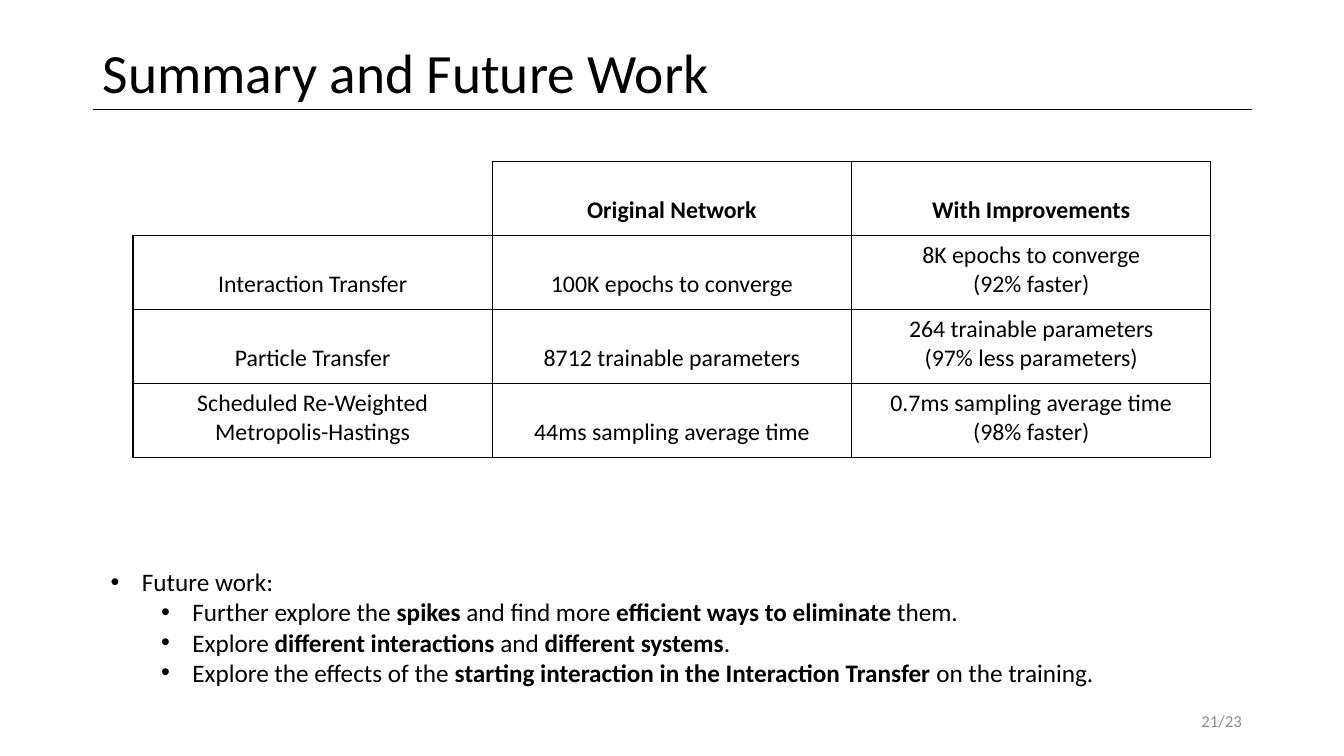
import pptx
import pptx.util
import pptx.dml.color
import pptx.enum.shapes
import pptx.enum.text
import pptx.oxml
import pptx.oxml.ns
from pptx.oxml.ns import qn

BLACK = pptx.dml.color.RGBColor(0x00, 0x00, 0x00)
WHITE = pptx.dml.color.RGBColor(0xFF, 0xFF, 0xFF)
GREY = pptx.dml.color.RGBColor(0x8C, 0x8C, 0x8C)
FONT = "Calibri"
ALIGN = pptx.enum.text.PP_ALIGN
ANCHOR = pptx.enum.text.MSO_ANCHOR
WIDTH = pptx.util.Inches(13.33)
HEIGHT = pptx.util.Inches(7.5)

MARGIN = 6.9
CONTENT = 86.25
RULE_TOP = 14.53
ROW_HEIGHT = 9.8

RESULTS = [
    ["", "**Original Network**", "**With Improvements**"],
    ["Interaction Transfer", "100K epochs to converge",
     "8K epochs to converge\n(92% faster)"],
    ["Particle Transfer", "8712 trainable parameters",
     "264 trainable parameters\n(97% less parameters)"],
    ["Scheduled Re-Weighted Metropolis-Hastings", "44ms sampling average time",
     "0.7ms sampling average time\n(98% faster)"],
]
ONE_LINE_LIMIT = 30
FUTURE_WORK = [
    (0, "Future work:"),
    (1, "Further explore the **spikes** and find more "
        "**efficient ways to eliminate **them."),
    (1, "Explore **different interactions **and **different systems**."),
    (1, "Explore the effects of the **starting interaction in the "
        "Interaction Transfer** on the training."),
]


def across(share):
    return round(WIDTH * share / 100)


def down(share):
    return round(HEIGHT * share / 100)


def area(left, top, width, height):
    return across(left), down(top), across(width), down(height)


def write(p, text, size=18, color=BLACK, align=ALIGN.LEFT, spacing=1.0):
    p.alignment = align
    p.line_spacing = spacing
    for i, part in enumerate(text.split("**")):
        if part:
            r = p.add_run()
            r.text = part
            r.font.name = FONT
            r.font.size = pptx.util.Pt(size)
            r.font.bold = i % 2 == 1
            r.font.color.rgb = color


def add_title(slide, text):
    sp = slide.shapes.title
    sp.left, sp.top, sp.width, sp.height = area(MARGIN, 5.33, CONTENT, 9.2)
    tf = sp.text_frame
    tf.vertical_anchor = ANCHOR.MIDDLE
    tf.auto_size = pptx.enum.text.MSO_AUTO_SIZE.NONE
    write(tf.paragraphs[0], text, size=39.6, spacing=0.9)


def add_rule(slide):
    y = down(RULE_TOP)
    line = slide.shapes.add_connector(
        pptx.enum.shapes.MSO_CONNECTOR.STRAIGHT,
        across(MARGIN), y, across(MARGIN + CONTENT), y)
    line.line.color.rgb = BLACK
    line.line.width = pptx.util.Pt(0.5)
    line._element.spPr.append(pptx.oxml.parse_xml(
        f'<a:effectLst {pptx.oxml.ns.nsdecls("a")}/>'))


def add_text_box(slide, *box):
    tf = slide.shapes.add_textbox(*area(*box)).text_frame
    tf.word_wrap = True
    return tf


def set_borders(cell, visible):
    for side in ("L", "R", "T", "B"):
        paint = ('<a:solidFill><a:srgbClr val="000000"/></a:solidFill>'
                 if side in visible else "<a:noFill/>")
        cell._tc.get_or_add_tcPr().append(pptx.oxml.parse_xml(
            f'<a:ln{side} {pptx.oxml.ns.nsdecls("a")} w="12700">{paint}</a:ln{side}>'))


def add_results(slide, rows):
    table = slide.shapes.add_table(
        len(rows), len(rows[0]),
        *area(9.9, 21.33, 80.2, ROW_HEIGHT * len(rows))).table
    table.first_row = table.horz_banding = False
    for row in table.rows:
        row.height = down(ROW_HEIGHT)
    for cell, text in zip(table.iter_cells(), sum(rows, [])):
        set_borders(cell, "LRTB" if text else "RB")
        cell.fill.solid()
        cell.fill.fore_color.rgb = WHITE
        single = "\n" not in text and len(text) < ONE_LINE_LIMIT
        tf = cell.text_frame
        for i, line in enumerate(text.split("\n")):
            p = tf.add_paragraph() if i else tf.paragraphs[0]
            write(p, line, size=17, align=ALIGN.CENTER,
                  spacing=2.0 if text and single else 1.0)


def set_bullet(p, level):
    p.level = level
    pPr = p._p.get_or_add_pPr()
    pPr.set("marL", str(pptx.util.Inches(0.31 + 0.5 * level)))
    pPr.set("indent", str(pptx.util.Inches(-0.31)))
    for tag, key, value in (("a:buFont", "typeface", "Arial"),
                            ("a:buChar", "char", "•")):
        bullet = pPr.makeelement(qn(tag), {key: value})
        pPr.append(bullet)


def add_bullets(slide, items):
    tf = add_text_box(slide, 7.5, 74.27, 87, 21.6)
    for i, (level, text) in enumerate(items):
        p = tf.add_paragraph() if i else tf.paragraphs[0]
        write(p, text)
        set_bullet(p, level)


def add_page_number(slide, text):
    tf = add_text_box(slide, 70.65, 92.67, 22.5, 5.33)
    tf.vertical_anchor = ANCHOR.MIDDLE
    write(tf.paragraphs[0], text, size=12, color=GREY, align=ALIGN.RIGHT)


def main():
    prs = pptx.Presentation()
    prs.slide_width, prs.slide_height = WIDTH, HEIGHT
    slide = prs.slides.add_slide(prs.slide_layouts.get_by_name("Title Only"))
    add_title(slide, "Summary and Future Work")
    add_results(slide, RESULTS)
    add_page_number(slide, "21/23")
    add_rule(slide)
    add_bullets(slide, FUTURE_WORK)
    prs.save("out.pptx")


if __name__ == "__main__":
    main()
